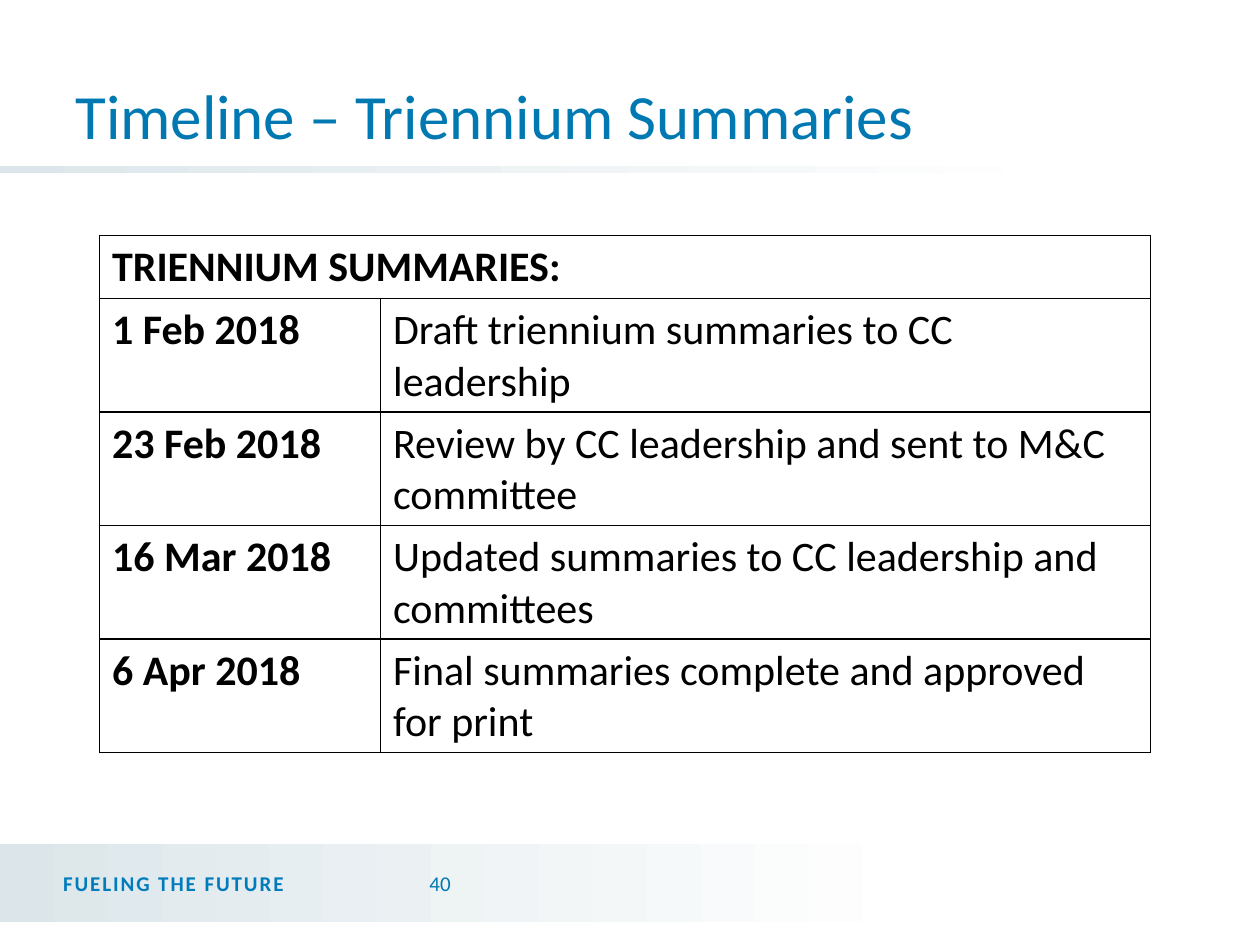
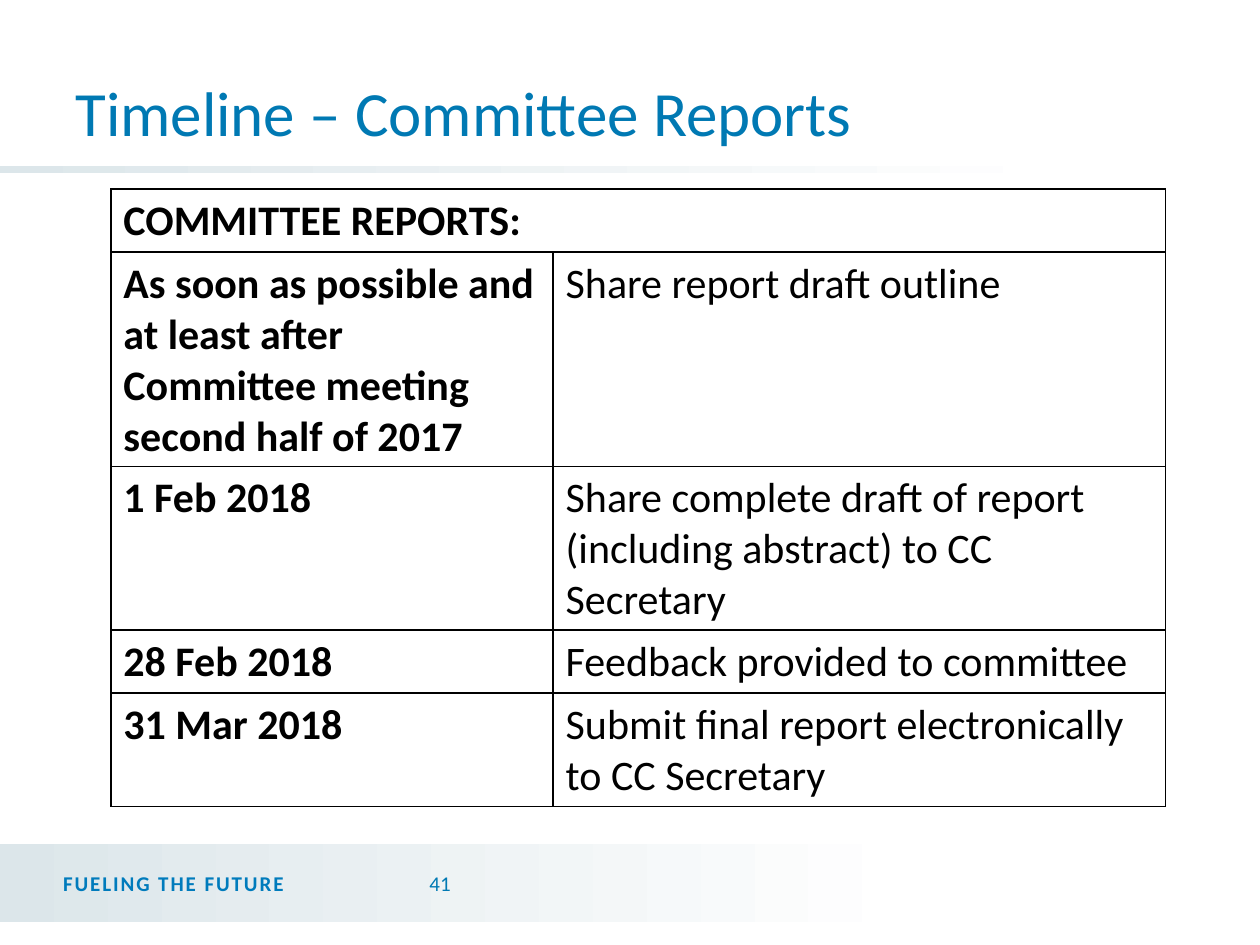
from pptx import Presentation
from pptx.dml.color import RGBColor
from pptx.enum.shapes import MSO_SHAPE
from pptx.enum.text import MSO_ANCHOR
from pptx.oxml import parse_xml
from pptx.oxml.ns import nsdecls
from pptx.util import Inches, Pt

RECTANGLE = MSO_SHAPE.RECTANGLE
MIDDLE, BOTTOM = MSO_ANCHOR.MIDDLE, MSO_ANCHOR.BOTTOM

BLUE = RGBColor(0x00, 0x79, 0xB3)
FOOTER_BLUE = RGBColor(0x00, 0x7B, 0xBC)
MIST = RGBColor(0xDC, 0xE6, 0xEA)
WHITE = RGBColor(0xFF, 0xFF, 0xFF)
BLACK = RGBColor(0x00, 0x00, 0x00)

FONT = "Calibri"
TITLE_FORMAT = {"name": FONT, "size": Pt(36), "color": BLUE}
MOTTO_FORMAT = {"name": FONT, "size": Pt(12), "color": FOOTER_BLUE, "bold": True}
NUMBER_FORMAT = {"name": FONT, "size": Pt(12), "color": BLUE}
DATE_FORMAT = {"name": FONT, "size": Pt(24), "color": BLACK, "bold": True}
TASK_FORMAT = {**DATE_FORMAT, "bold": False}

SLIDE_WIDTH, SLIDE_HEIGHT = 10, 7.5
MARGIN = 0.5
TITLE_HEIGHT = 1.25
FOOTER_BOX = (0, 6.7, 7.42, 0.62)
RULE_BOX = (0, 1.32, 9.5, 0.05)
MOTTO_WIDTH, NUMBER_WIDTH = 2.81, 0.8
LINE_HEIGHT, CELL_PADDING = 0.4, 0.1

# Each table row holds a date, a task and the number of text lines it needs.
TIMELINES = [
    {
        "title": "Timeline – Triennium Summaries",
        "title_top": 0.01,
        "number": 40,
        "corner": (0.79, 1.87),
        "columns": (2.23, 6.11),
        "heading": "TRIENNIUM SUMMARIES:",
        "rows": [
            ("1 Feb 2018", "Draft triennium summaries to CC leadership", 2),
            ("23 Feb 2018", "Review by CC leadership and sent to M&C committee", 2),
            ("16 Mar 2018", "Updated summaries to CC leadership and committees", 2),
            ("6 Apr 2018", "Final summaries complete and approved for print", 2),
        ],
    },
    {
        "title": "Timeline – Committee Reports",
        "title_top": -0.02,
        "number": 41,
        "corner": (0.88, 1.5),
        "columns": (3.51, 4.86),
        "heading": "COMMITTEE REPORTS:",
        "rows": [
            ("As soon as possible and at least after Committee meeting "
             "second half of 2017", "Share report draft outline", 4),
            ("1 Feb 2018", "Share complete draft of report (including abstract) "
             "to CC Secretary", 3),
            ("28 Feb 2018", "Feedback provided to committee", 1),
            ("31 Mar 2018", "Submit final report electronically to CC Secretary", 2),
        ],
    },
]


def write(text_frame, text, formats):
    """Put one formatted run in the frame and return it."""
    run = text_frame.paragraphs[0].add_run()
    run.text = text
    for name, value in formats.items():
        if name == "color":
            run.font.color.rgb = value
        else:
            setattr(run.font, name, value)
    return run


def add_text(slide, box, text, formats, anchor):
    text_frame = slide.shapes.add_textbox(*map(Inches, box)).text_frame
    text_frame.word_wrap = True
    text_frame.vertical_anchor = anchor
    return text_frame, write(text_frame, text, formats)


def add_fading_band(slide, box, fade_end):
    band = slide.shapes.add_shape(RECTANGLE, *map(Inches, box))
    band.shadow.inherit = False
    band.line.fill.background()
    band.fill.gradient()
    band.fill.gradient_angle = 0
    stops = zip(band.fill.gradient_stops, (MIST, WHITE), (0, fade_end))
    for stop, color, position in stops:
        stop.color.rgb = color
        stop.position = position


def add_footer(slide, box, number):
    add_fading_band(slide, box, 0.98)
    top, height = box[1] + 0.11, 0.4
    motto_box = (box[0] + MARGIN, top, MOTTO_WIDTH, height)
    motto, run = add_text(slide, motto_box, "FUELING THE FUTURE", MOTTO_FORMAT, MIDDLE)
    motto.margin_left = 0
    run.font._element.set("spc", "110")
    number_box = (box[0] + MARGIN + MOTTO_WIDTH, top, NUMBER_WIDTH, height)
    add_text(slide, number_box, str(number), NUMBER_FORMAT, MIDDLE)


def add_title(slide, top, title):
    add_fading_band(slide, RULE_BOX, 0.89)
    title_box = (MARGIN, top, SLIDE_WIDTH - 2 * MARGIN, TITLE_HEIGHT)
    add_text(slide, title_box, title, TITLE_FORMAT, BOTTOM)


def style_cell(cell):
    """Give the cell thin black borders and no fill."""
    properties = cell._tc.get_or_add_tcPr()
    for side in "LRTB":
        properties.append(parse_xml(
            f'<a:ln{side} {nsdecls("a")} w="{Pt(1)}"><a:solidFill>'
            f'<a:srgbClr val="{BLACK}"/></a:solidFill></a:ln{side}>'))
    cell.fill.background()


def add_timeline_table(slide, corner, columns, heading, rows):
    line_counts = [1] + [lines for _, _, lines in rows]
    heights = [CELL_PADDING + LINE_HEIGHT * lines for lines in line_counts]
    box = (*corner, sum(columns), sum(heights))
    table = slide.shapes.add_table(
        len(heights), len(columns), *map(Inches, box)).table
    table.first_row = table.horz_banding = False
    for column, width in zip(table.columns, columns):
        column.width = Inches(width)
    for row, height in zip(table.rows, heights):
        row.height = Inches(height)
    for cell in table.iter_cells():
        style_cell(cell)

    table.cell(0, 0).merge(table.cell(0, 1))
    write(table.cell(0, 0).text_frame, heading, DATE_FORMAT)
    for index, (date, task, _) in enumerate(rows, start=1):
        write(table.cell(index, 0).text_frame, date, DATE_FORMAT)
        write(table.cell(index, 1).text_frame, task, TASK_FORMAT)


def add_timeline_slide(presentation, timeline):
    slide = presentation.slides.add_slide(presentation.slide_layouts[6])
    slide.background.fill.solid()
    slide.background.fill.fore_color.rgb = WHITE
    add_footer(slide, FOOTER_BOX, timeline["number"])
    add_title(slide, timeline["title_top"], timeline["title"])
    add_timeline_table(slide, timeline["corner"], timeline["columns"],
                       timeline["heading"], timeline["rows"])


def main():
    presentation = Presentation()
    presentation.slide_width = Inches(SLIDE_WIDTH)
    presentation.slide_height = Inches(SLIDE_HEIGHT)
    for timeline in TIMELINES:
        add_timeline_slide(presentation, timeline)
    presentation.save("out.pptx")


if __name__ == "__main__":
    main()
